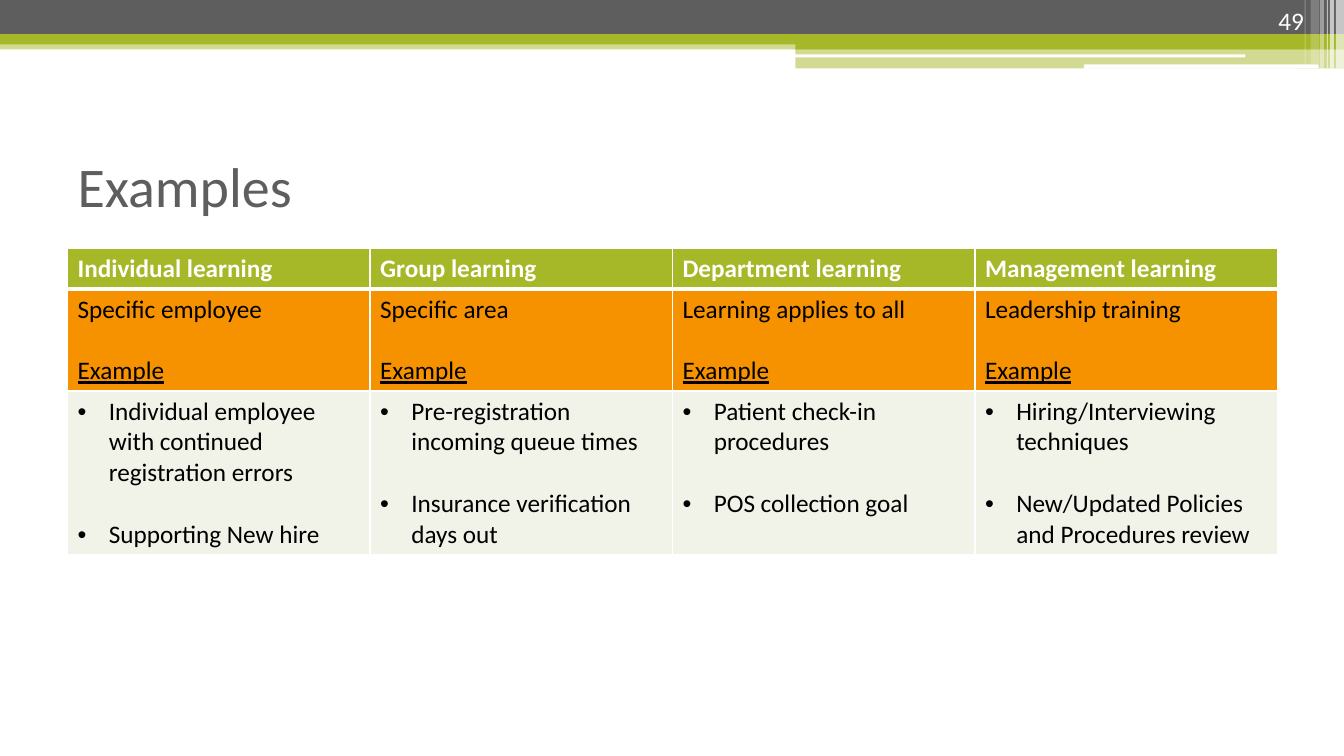
from lxml.etree import SubElement
from pptx import Presentation
from pptx.dml.color import RGBColor
from pptx.enum.shapes import MSO_SHAPE
from pptx.enum.text import MSO_ANCHOR, PP_ALIGN
from pptx.oxml.ns import qn
from pptx.util import Inches, Pt

GREEN, GRAY, WHITE, BLACK = "A6B727", "5E5E5E", "FFFFFF", "000000"
ORANGE, PALE = "F69200", "F1F3E8"

BANDS = [
    (0, 0.4, 13.33, 0.09, GREEN, 50),
    (0, 0, 13.33, 0.34, GRAY, 100),
    (0, 0.34, 13.33, 0.1, GREEN, 100),
    (7.89, 0.39, 5.44, 0.1, GREEN, 100),
    (7.89, 0.48, 5.44, 0.2, GREEN, 50),
]
GROOVES = [(7.88, 0.54, 4.47, 0.03), (10.75, 0.64, 2.33, 0.04)]
STRIPES = [
    (13.25, 0.08, 0.68, 65),
    (13.19, 0.04, 0.68, 65),
    (13.16, 0.01, 0.68, 60),
    (13.09, 0.04, 0.68, 40),
    (13, 0.08, 0.64, 20),
    (12.94, 0.01, 0.64, 30),
]
LEARNING = [
    ("Individual learning", "Specific employee",
     ["Individual employee with continued registration errors", "Supporting New hire"]),
    ("Group learning", "Specific area",
     ["Pre-registration incoming queue times", "Insurance verification days out"]),
    ("Department learning", "Learning applies to all",
     ["Patient check-in procedures", "POS collection goal"]),
    ("Management learning", "Leadership training",
     ["Hiring/Interviewing techniques", "New/Updated Policies and Procedures review"]),
]
ROW_HEIGHTS = [0.41, 1.01, 1.62]


def color(hex_code):
    return RGBColor.from_string(hex_code)


class SlideBuilder:
    font = "Calibri"
    text_size = 18
    blank_line = 22

    def __init__(self, slide):
        self.slide = slide

    def style(self, paragraph, size, hex_code, bold=False, underline=False):
        for run in paragraph.runs:
            run.font.name = self.font
            run.font.size = Pt(size)
            run.font.color.rgb = color(hex_code)
            run.font.bold = bold
            run.font.underline = underline

    def band(self, left, top, width, height, hex_code, opacity=100, kind=MSO_SHAPE.RECTANGLE):
        band = self.slide.shapes.add_shape(
            kind, Inches(left), Inches(top), Inches(width), Inches(height))
        band.shadow.inherit = False
        band.line.fill.background()
        band.fill.solid()
        band.fill.fore_color.rgb = color(hex_code)
        if opacity < 100:
            rgb = band.fill._xPr.find(".//" + qn("a:srgbClr"))
            SubElement(rgb, qn("a:alpha"), val=str(opacity * 1000))

    def title(self, text, left, top, width, height):
        title = self.slide.shapes.title
        title.left, title.top = Inches(left), Inches(top)
        title.width, title.height = Inches(width), Inches(height)
        title.text_frame.text = text
        title.text_frame.vertical_anchor = MSO_ANCHOR.MIDDLE
        heading = title.text_frame.paragraphs[0]
        heading.alignment = PP_ALIGN.LEFT
        self.style(heading, 40, GRAY)

    def page_number(self, text, left, top, width, height):
        box = self.slide.shapes.add_textbox(
            Inches(left), Inches(top), Inches(width), Inches(height))
        frame = box.text_frame
        frame.word_wrap = True
        frame.vertical_anchor = MSO_ANCHOR.BOTTOM
        frame.text = text
        frame.paragraphs[0].alignment = PP_ALIGN.RIGHT
        self.style(frame.paragraphs[0], self.text_size, WHITE)

    def bullet(self, paragraph):
        properties = paragraph._p.get_or_add_pPr()
        properties.set("marL", str(Inches(0.31)))
        properties.set("indent", str(Inches(-0.31)))
        SubElement(properties, qn("a:buFont"), typeface="Arial")
        SubElement(properties, qn("a:buChar"), char="•")

    def borders(self, cell, top, bottom):
        properties = cell._tc.get_or_add_tcPr()
        for side, points in zip("LRTB", (1, 1, top, bottom)):
            line = SubElement(properties, qn("a:ln" + side), w=str(Pt(points)))
            SubElement(SubElement(line, qn("a:solidFill")), qn("a:srgbClr"), val=WHITE)

    def cell(self, cell, lines, fill, text_color=BLACK, bold=False,
             underlined=(), bulleted=False, top=1, bottom=1):
        self.borders(cell, top, bottom)
        cell.fill.solid()
        cell.fill.fore_color.rgb = color(fill)
        cell.text_frame.text = "\n".join(lines)
        for index, paragraph in enumerate(cell.text_frame.paragraphs):
            if index:
                paragraph.space_before = Pt(self.blank_line)
            if bulleted:
                self.bullet(paragraph)
            self.style(paragraph, self.text_size, text_color, bold, index in underlined)

    def learning_table(self, columns, left, top, width):
        table = self.slide.shapes.add_table(
            len(ROW_HEIGHTS), len(columns), Inches(left), Inches(top),
            Inches(width), Inches(sum(ROW_HEIGHTS))).table
        for row, height in zip(table.rows, ROW_HEIGHTS):
            row.height = Inches(height)
        for index, (level, audience, examples) in enumerate(columns):
            table.columns[index].width = Inches(width / len(columns))
            self.cell(table.cell(0, index), [level], GREEN, WHITE, bold=True, bottom=3)
            self.cell(table.cell(1, index), [audience, "Example"], ORANGE,
                      underlined=(1,), top=3)
            self.cell(table.cell(2, index), examples, PALE, bulleted=True)


def main():
    deck = Presentation()
    deck.slide_width, deck.slide_height = Inches(13.33), Inches(7.5)
    builder = SlideBuilder(deck.slides.add_slide(deck.slide_layouts[5]))
    for band in BANDS:
        builder.band(*band)
    for groove in GROOVES:
        builder.band(*groove, WHITE, kind=MSO_SHAPE.ROUNDED_RECTANGLE)
    for left, width, height, opacity in STRIPES:
        builder.band(left, 0, width, height, WHITE, opacity)
    builder.page_number("49", 11.92, 0, 1.11, 0.4)
    builder.learning_table(LEARNING, 0.67, 2.46, 12)
    builder.title("Examples", 0.67, 1.25, 12, 1.17)
    deck.save("out.pptx")


if __name__ == "__main__":
    main()
